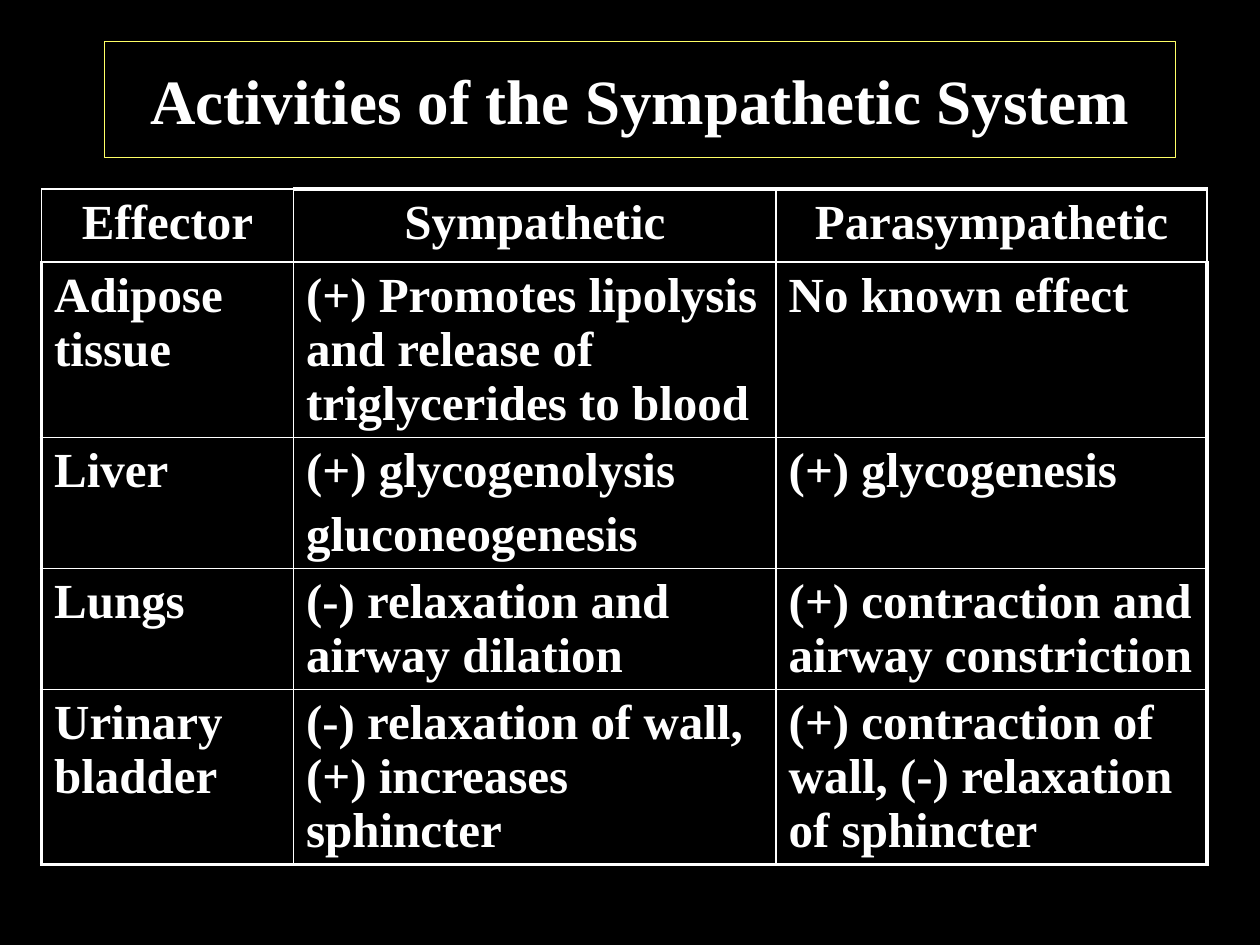
from lxml import etree
from pptx import Presentation
from pptx.dml.color import RGBColor
from pptx.enum.text import MSO_ANCHOR, PP_ALIGN
from pptx.oxml.ns import qn
from pptx.util import Inches, Pt

CENTER, LEFT = PP_ALIGN.CENTER, PP_ALIGN.LEFT
MIDDLE = MSO_ANCHOR.MIDDLE
TITLE_ONLY = 5
FONT = "Times New Roman"
COLORS = {"background": "000000", "text": "FFFFFF", "grid": "FFFFFF", "frame": "FFFF66"}
THIN, THICK = 1, 2.25
COLUMN_WIDTHS = [2, 3.83, 3.42]
ROW_HEIGHTS = [0.58, 1.39, 1.04, 0.96, 1.39]
ROWS = [
    ["Effector", "Sympathetic", "Parasympathetic"],
    ["Adipose tissue", "(+) Promotes lipolysis and release of triglycerides to blood", "No known effect"],
    ["Liver", "(+) glycogenolysis\ngluconeogenesis", "(+) glycogenesis"],
    ["Lungs", "(-) relaxation and airway dilation", "(+) contraction and airway constriction"],
    ["Urinary bladder", "(-) relaxation of wall, (+) increases sphincter",
     "(+) contraction of wall, (-) relaxation of sphincter"],
]


def color(name):
    return RGBColor.from_string(COLORS[name])


def write_text(frame, text, size, align=LEFT, before=0):
    frame.word_wrap = True
    frame.text = text
    for para in frame.paragraphs:
        para.alignment = align
        para.space_before = Pt(before)
        for span in para.runs:
            span.font.name = FONT
            span.font.size = Pt(size)
            span.font.bold = True
            span.font.color.rgb = color("text")


def add_title(page, text):
    box = page.shapes.title
    box.left, box.top = Inches(0.83), Inches(0.33)
    box.width, box.height = Inches(8.5), Inches(0.92)
    box.line.color.rgb = color("frame")
    box.line.width = Pt(0.75)
    write_text(box.text_frame, text, 36, align=CENTER)
    box.text_frame.vertical_anchor = MIDDLE


def set_borders(cell, widths):
    properties = cell._tc.get_or_add_tcPr()
    for tag, width in widths.items():
        line = etree.SubElement(properties, qn(f"a:{tag}"), w=str(Pt(width)))
        fill = etree.SubElement(line, qn("a:solidFill"))
        etree.SubElement(fill, qn("a:srgbClr"), val=COLORS["grid"])


def border_widths(row, column):
    last_row, last_column = len(ROWS) - 1, len(COLUMN_WIDTHS) - 1
    thick_sides = {
        "lnL": row > 0 and column == 0,
        "lnR": row > 0 and column == last_column,
        "lnT": row == 0 and column > 0,
        "lnB": row == last_row,
    }
    return {tag: THICK if thick else THIN for tag, thick in thick_sides.items()}


def add_effects_table(page):
    table = page.shapes.add_table(
        len(ROWS), len(COLUMN_WIDTHS), Inches(0.33), Inches(1.5),
        Inches(sum(COLUMN_WIDTHS)), Inches(sum(ROW_HEIGHTS))).table
    for column, width in zip(table.columns, COLUMN_WIDTHS):
        column.width = Inches(width)
    for row, height in zip(table.rows, ROW_HEIGHTS):
        row.height = Inches(height)
    for row, texts in enumerate(ROWS):
        for column, text in enumerate(texts):
            cell = table.cell(row, column)
            set_borders(cell, border_widths(row, column))
            cell.fill.solid()
            cell.fill.fore_color.rgb = color("background")
            write_text(cell.text_frame, text, 28, align=LEFT if row else CENTER, before=5.6)


def main():
    deck = Presentation()
    deck.slide_width, deck.slide_height = Inches(10), Inches(7.5)
    page = deck.slides.add_slide(deck.slide_layouts[TITLE_ONLY])
    page.background.fill.solid()
    page.background.fill.fore_color.rgb = color("background")
    add_title(page, "Activities of the Sympathetic System")
    add_effects_table(page)
    deck.save("out.pptx")


if __name__ == "__main__":
    main()
